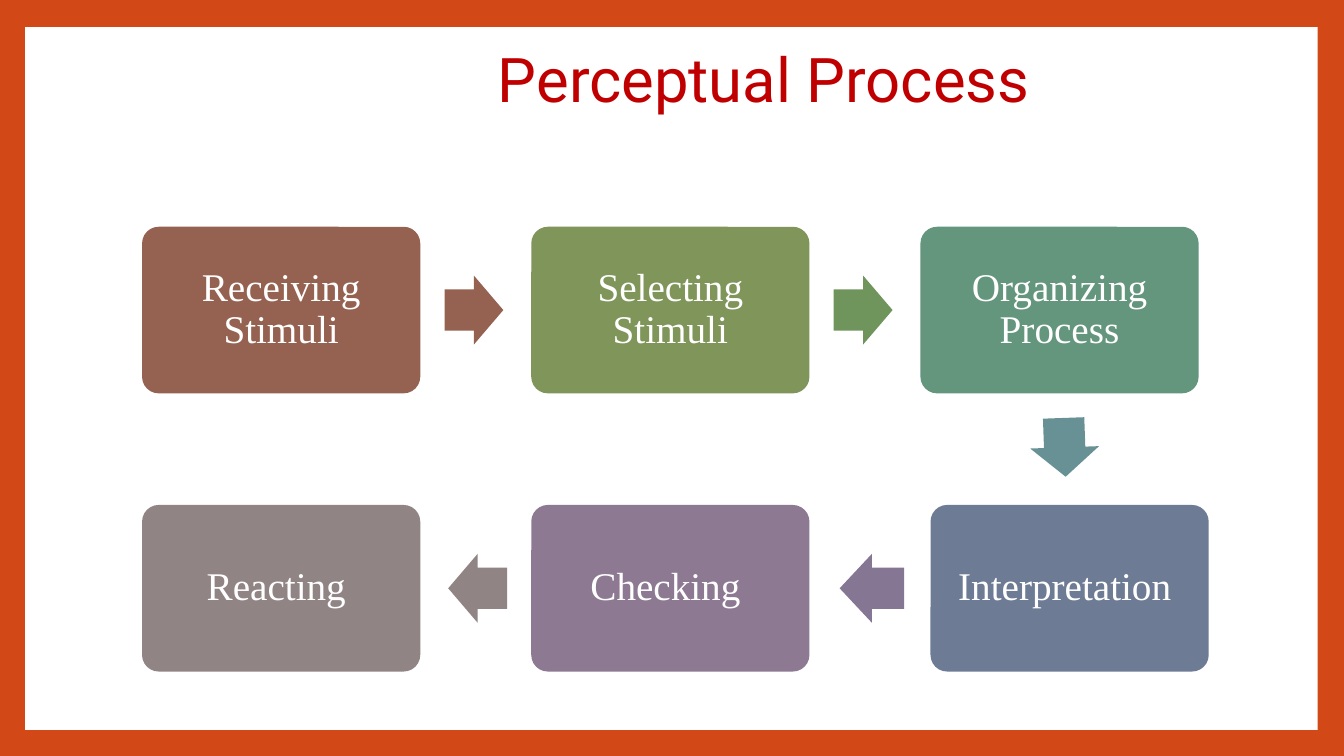
"""Build the Perceptual Process slide: six steps in two rows joined by arrows."""
from dataclasses import dataclass

from pptx import Presentation
from pptx.dml.color import RGBColor
from pptx.enum.shapes import MSO_SHAPE
from pptx.enum.text import MSO_ANCHOR, PP_ALIGN
from pptx.util import Pt

RECT, ROUNDED, ARROW = MSO_SHAPE.RECTANGLE, MSO_SHAPE.ROUNDED_RECTANGLE, MSO_SHAPE.RIGHT_ARROW
MIDDLE = MSO_ANCHOR.MIDDLE
LEFT, CENTER = PP_ALIGN.LEFT, PP_ALIGN.CENTER

TITLE = "Perceptual Process"
# text, column, row, shift right, fill
STEPS = [
    ("Receiving Stimuli", 0, 0, 0, "956251"),
    ("Selecting Stimuli", 1, 0, 0, "7F955A"),
    ("Organizing Process", 2, 0, 0, "64957D"),
    ("Interpretation ", 2, 1, 7.2, "6E7B94"),
    ("Checking ", 1, 1, 0, "8D7992"),
    ("Reacting ", 0, 1, 0, "918485"),
]
# direction x, direction y, rotation, length, fill
ARROWS = [
    (1, 0, 0, 42, "956251"),
    (1, 0, 0, 42, "6F955C"),
    (0, 1, 88, 42, "689195"),
    (-1, 0, 180, 46, "857693"),
    (-1, 0, 180, 42, "918485"),
]


@dataclass(frozen=True)
class Theme:
    """Colours, fonts and type sizes."""
    frame: str = "D34817"
    panel: str = "FFFFFF"
    title: str = "C00000"
    label: str = "FFFFFF"
    title_font: str = "Roboto"
    label_font: str = "Times New Roman"
    title_size: int = 44
    label_size: int = 28


THEME = Theme()
GRID_X, GRID_Y = 101.5, 162
PITCH_X, PITCH_Y = 278, 198.7
BOX_W, BOX_H, BOX_INSET = 198.7, 119, 12.2
ARROW_H, ARROW_BACK = 49.2, 1.3


def write(sp, text, *, font, size, color, align, inset=None):
    """Write one formatted paragraph into a shape."""
    tf = sp.text_frame
    tf.word_wrap = True
    tf.vertical_anchor = MIDDLE
    if inset is not None:
        tf.margin_left = tf.margin_right = Pt(inset)
        tf.margin_top = tf.margin_bottom = Pt(inset)
    p = tf.paragraphs[0]
    p.alignment = align
    p.line_spacing = 0.9
    r = p.add_run()
    r.text = text
    r.font.name = font
    r.font.size = Pt(size)
    r.font.color.rgb = RGBColor.from_string(color)


def add_block(s, kind, x, y, w, h, fill, adjustments=()):
    """Add a flat filled shape without outline."""
    sp = s.shapes.add_shape(kind, Pt(x), Pt(y), Pt(w), Pt(h))
    sp.shadow.inherit = False
    sp.fill.solid()
    sp.fill.fore_color.rgb = RGBColor.from_string(fill)
    sp.line.fill.background()
    for i, value in enumerate(adjustments):
        sp.adjustments[i] = value
    return sp


def add_title(s):
    """Place and format the title placeholder."""
    sp = s.shapes.title
    sp.left, sp.top, sp.width, sp.height = Pt(348.5), Pt(28.8), Pt(545.8), Pt(60.5)
    write(sp, TITLE, font=THEME.title_font, size=THEME.title_size,
          color=THEME.title, align=LEFT)


def add_steps(s):
    """Add the step boxes and return their centres."""
    centres = []
    for text, col, row, shift, fill in STEPS:
        x, y = GRID_X + col * PITCH_X + shift, GRID_Y + row * PITCH_Y
        sp = add_block(s, ROUNDED, x, y, BOX_W, BOX_H, fill, (0.1,))
        write(sp, text, font=THEME.label_font, size=THEME.label_size,
              color=THEME.label, align=CENTER, inset=BOX_INSET)
        centres.append((x + BOX_W / 2, y + BOX_H / 2))
    return centres


def add_arrows(s, centres):
    """Add an arrow midway between each pair of successive steps."""
    for (x1, y1), (x2, y2), arrow in zip(centres, centres[1:], ARROWS):
        dx, dy, rotation, length, fill = arrow
        x = (x1 + x2) / 2 - dx * ARROW_BACK
        y = (y1 + y2) / 2 - dy * ARROW_BACK
        sp = add_block(s, ARROW, x - length / 2, y - ARROW_H / 2,
                       length, ARROW_H, fill, (0.6, 0.5))
        sp.rotation = rotation


def main():
    """Create and save the slide."""
    prs = Presentation()
    prs.slide_width, prs.slide_height = Pt(960), Pt(540)
    s = prs.slides.add_slide(prs.slide_layouts[5])
    s.background.fill.solid()
    s.background.fill.fore_color.rgb = RGBColor.from_string(THEME.frame)
    panel = add_block(s, RECT, 18, 19.3, 923.2, 502, THEME.panel)
    s.shapes.title.element.addprevious(panel.element)
    add_title(s)
    add_arrows(s, add_steps(s))
    prs.save("out.pptx")


if __name__ == "__main__":
    main()
